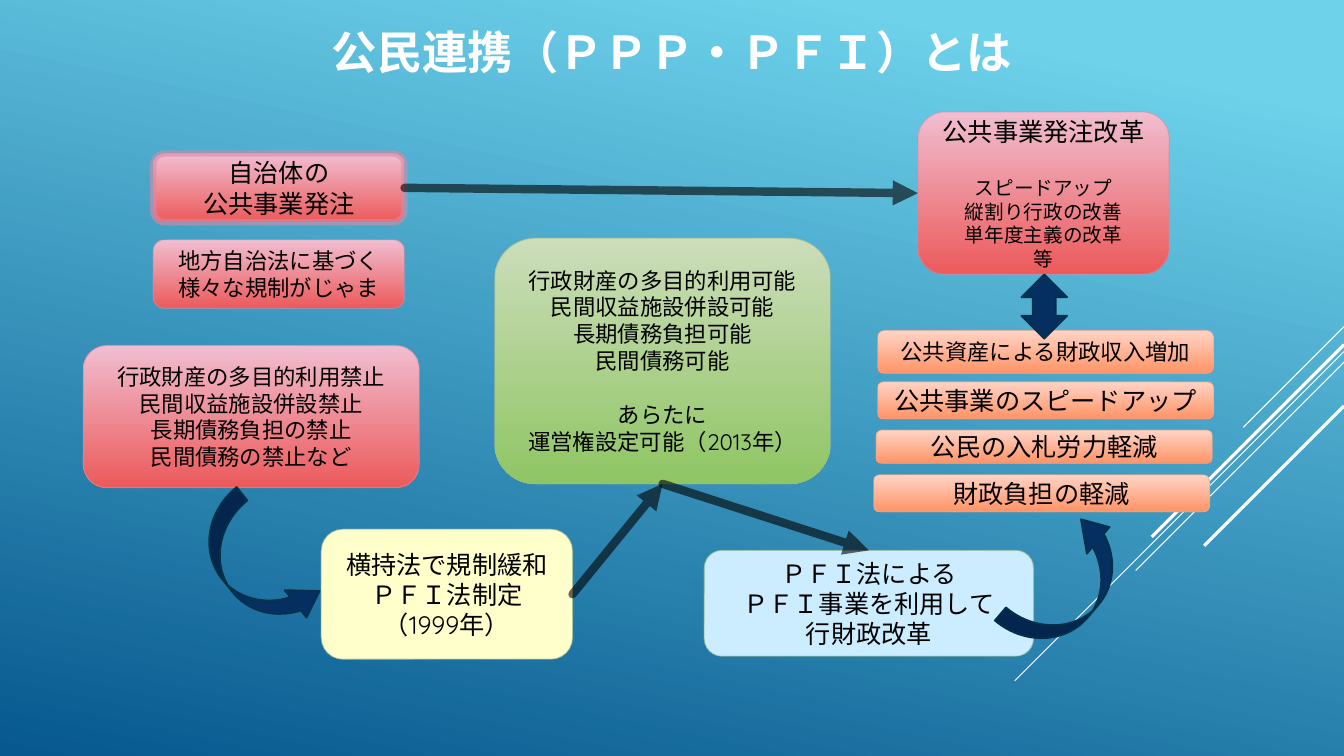
from lxml.etree import SubElement
from pptx import Presentation
from pptx.dml.color import RGBColor
from pptx.enum.shapes import MSO_CONNECTOR, MSO_SHAPE
from pptx.enum.text import MSO_ANCHOR, MSO_AUTO_SIZE, PP_ALIGN
from pptx.oxml.ns import qn
from pptx.util import Inches, Pt

FONT = "Quicksand"
NAVY, NAVY_EDGE = "052F61", "043148"
RED = {"fill": ("F0BED0", "EC5A5B"), "edge": "D68BA6"}
GREEN = {"fill": ("CCDDBA", "8FC563"), "edge": "A4BB8B"}
ORANGE = {"fill": ("FFD4C6", "FF9467"), "edge": "EEA78F"}
YELLOW = {"fill": ("FFFFCC",), "edge": "A4BB8B"}
BLUE = {"fill": ("CCECFF",), "edge": "A4BB8B"}
LEFT, RIGHT, TOP, BOTTOM = 1, 3, 0, 2


def rgb(value):
    return RGBColor.from_string(value)


def apply(target, values):
    for name, value in values.items():
        setattr(target, name, value)


class Deck:
    def __init__(self, width, height):
        self.prs = Presentation()
        apply(self.prs, {"slide_width": Inches(width), "slide_height": Inches(height)})
        self.s = self.prs.slides.add_slide(self.prs.slide_layouts[5])

    def x(self, share):
        return round(self.prs.slide_width * share / 100)

    def y(self, share):
        return round(self.prs.slide_height * share / 100)

    def rect(self, left, top, width, height):
        return self.x(left), self.y(top), self.x(width), self.y(height)

    def paint(self, fill, colors, angle=90, start=0):
        if len(colors) == 1:
            fill.solid()
            fill.fore_color.rgb = rgb(colors[0])
            return
        fill.gradient()
        fill.gradient_angle = 360 - angle
        for stop, color, position in zip(fill.gradient_stops, colors, (start, 1)):
            stop.position = position
            stop.color.rgb = rgb(color)

    def outline(self, shape, color, width, opacity=100):
        shape.line.width = Pt(width)
        self.paint(shape.line.fill, (color,))
        ln = shape.element.spPr.find(qn("a:ln"))
        if opacity < 100:
            clr = ln.find(".//" + qn("a:srgbClr"))
            SubElement(clr, qn("a:alpha"), val=str(opacity * 1000))
        return ln

    def text(self, tf, lines, size, color="000000", bold=False):
        apply(tf, {"word_wrap": True, "auto_size": MSO_AUTO_SIZE.NONE,
                   "vertical_anchor": MSO_ANCHOR.MIDDLE})
        for i, line in enumerate(lines):
            p = tf.paragraphs[0] if i == 0 else tf.add_paragraph()
            words, pt, before = line if isinstance(line, tuple) else (line, size, 0)
            apply(p, {"alignment": PP_ALIGN.CENTER, "space_before": Pt(before)})
            r = p.add_run()
            r.text = words
            apply(r.font, {"name": FONT, "size": Pt(pt), "bold": bold})
            r.font.color.rgb = rgb(color)

    def background(self, colors, angle, start):
        self.paint(self.s.background.fill, colors, angle, start)

    def title(self, words, *area):
        sp = self.s.shapes.title
        apply(sp, dict(zip(("left", "top", "width", "height"), self.rect(*area))))
        self.text(sp.text_frame, [words], 32.4, "FFFFFF", True)

    def shape(self, kind, area, colors, edge, width, opacity=100):
        sp = self.s.shapes.add_shape(kind, *self.rect(*area))
        sp.shadow.inherit = False
        self.paint(sp.fill, colors)
        self.outline(sp, edge, width, opacity)
        return sp

    def box(self, area, look, size, lines, edge_width=0.75):
        sp = self.shape(MSO_SHAPE.ROUNDED_RECTANGLE, area, look["fill"], look["edge"], edge_width, 60)
        self.text(sp.text_frame, lines, size)
        return sp

    def block_arrow(self, kind, area, adjustments, rotation=0):
        sp = self.shape(kind, area, (NAVY,), NAVY_EDGE, 1.25)
        sp.rotation = rotation
        for i, value in enumerate(adjustments):
            sp.adjustments[i] = value

    def line(self, x1, y1, x2, y2, color, width, opacity=100):
        c = self.s.shapes.add_connector(MSO_CONNECTOR.STRAIGHT, self.x(x1), self.y(y1), self.x(x2), self.y(y2))
        ln = self.outline(c, color, width, opacity)
        SubElement(c.element.spPr, qn("a:effectLst"))
        return c, ln

    def arrow(self, source, source_site, target, target_site):
        c, ln = self.line(0, 0, 1, 1, "000000", 6, 60)
        c.begin_connect(source, source_site)
        c.end_connect(target, target_site)
        ln.set("cap", "rnd")
        SubElement(ln, qn("a:round"))
        SubElement(ln, qn("a:tailEnd"), type="triangle")


def main():
    d = Deck(13.333, 7.5)
    d.background(("6ED2EB", "06588E"), 102, 0.1)
    for top, run, width in ((43.2, 7.5, 0.75), (46.5, 24.5, 0.75), (47.9, 15.5, 0.75),
                            (45.6, 14.3, 2.25), (53.7, 10.4, 2.25)):
        d.line(100, top, 100 - run, top + run * 16 / 9, "FFFFFF", width)
    d.title("公民連携（ＰＰＰ・ＰＦＩ）とは", 17.3, 2.8, 65.4, 8)

    orders = d.box((11.4, 20.3, 18.7, 9.1), RED, 18, ["自治体の", "公共事業発注"], 4.5)
    d.box((11.4, 31.7, 18.7, 9.1), RED, 16, ["地方自治法に基づく", "様々な規制がじゃま"])
    d.box((6.2, 45.7, 25, 18.8), RED, 16,
          ["行政財産の多目的利用禁止", "民間収益施設併設禁止", "長期債務負担の禁止", "民間債務の禁止など"])
    law = d.box((23.9, 70, 18.7, 17.2), YELLOW, 18, ["横持法で規制緩和", "ＰＦＩ法制定", "（1999年）"])
    allowed = d.box((36.8, 31.5, 25, 32.5), GREEN, 16,
                    ["行政財産の多目的利用可能", "民間収益施設併設可能", "長期債務負担可能", "民間債務可能",
                     ("あらたに", 16, 19.5), "運営権設定可能（2013年）"])
    project = d.box((52.4, 72.8, 24.5, 14), BLUE, 18,
                    ["ＰＦＩ法による", "ＰＦＩ事業を利用して", "行財政改革"])
    for left, top, height, size, benefit in (
            (65, 62.8, 4.9, 18, "財政負担の軽減"),
            (65.2, 56.9, 4.4, 18, "公民の入札労力軽減"),
            (65.3, 50.5, 4.9, 18, "公共事業のスピードアップ"),
            (65.3, 43.7, 5.7, 16, "公共資産による財政収入増加")):
        d.box((left, top, 25, height), ORANGE, size, [benefit])
    reform = d.box((68.3, 14.8, 18.7, 21.5), RED, 14,
                   [("公共事業発注改革", 18, 0), ("スピードアップ", 14, 21.5),
                    "縦割り行政の改善", "単年度主義の改革", "等"])

    d.arrow(law, RIGHT, allowed, BOTTOM)
    d.arrow(allowed, BOTTOM, project, TOP)
    d.arrow(orders, RIGHT, reform, LEFT)
    for left, top, rotation in ((13.5, 70.5, 51.4), (74, 72.9, 310.4)):
        d.block_arrow(MSO_SHAPE.CURVED_UP_ARROW, (left, top, 11.2, 9.1), (0.25, 0.51, 0.39), rotation)
    d.block_arrow(MSO_SHAPE.UP_DOWN_ARROW, (76, 36.3, 3.4, 8.5), (0.3, 0.5))
    d.prs.save("out.pptx")


if __name__ == "__main__":
    main()
